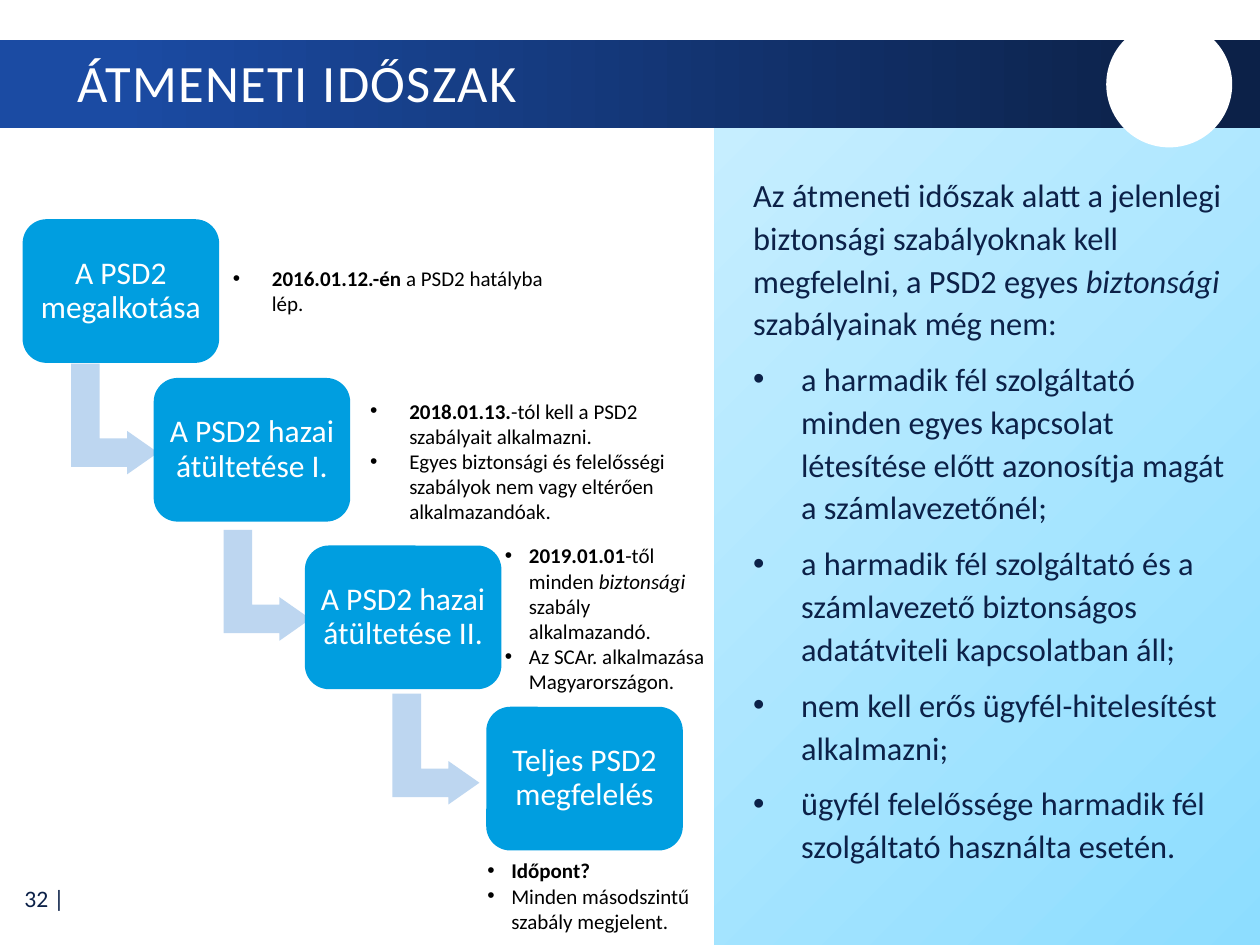
from collections import namedtuple

from lxml.etree import SubElement
from pptx import Presentation
from pptx.dml.color import RGBColor
from pptx.enum.shapes import MSO_SHAPE as SHAPE
from pptx.enum.text import MSO_ANCHOR as ANCHOR, PP_ALIGN as ALIGN
from pptx.oxml.ns import qn
from pptx.util import Inches, Pt

FONT = "Calibri"
COLORS = {
    "navy": "0C2148", "royal": "1B4BA3", "sky": "8DDDFF", "pale": "C6EEFF",
    "step": "009EE0", "arrow": "BDD6F0", "white": "FFFFFF", "black": "000000",
}
Box = namedtuple("Box", "left top width height")


def color(name):
    return RGBColor.from_string(COLORS[name])


def inches(box):
    return [Inches(value) for value in box]


def add_bullet(para, indent):
    props = para._p.get_or_add_pPr()
    props.set("marL", str(Inches(indent)))
    props.set("indent", str(-Inches(indent)))
    SubElement(props, qn("a:buFont")).set("typeface", "Arial")
    SubElement(props, qn("a:buChar")).set("char", "•")


def write(frame, paragraphs, size, ink, align=ALIGN.LEFT, anchor=ANCHOR.TOP,
          line=1.0, before=0, indent=0, plain_first=False, spacing=0, margin=None):
    """Fill a frame; a paragraph is a list of (text, style), style "b", "i" or ""."""
    frame.word_wrap = True
    frame.vertical_anchor = anchor
    if margin is not None:
        frame.margin_left = frame.margin_right = Inches(margin)
        frame.margin_top = frame.margin_bottom = Inches(margin)
    for index, spans in enumerate(paragraphs):
        para = frame.add_paragraph() if index else frame.paragraphs[0]
        if indent and (index or not plain_first):
            add_bullet(para, indent)
        para.alignment = align
        para.line_spacing = line
        para.space_before = Pt(before if index else 0)
        for text, style in spans:
            span = para.add_run()
            span.text = text
            span.font.name = FONT
            span.font.size = Pt(size)
            span.font.color.rgb = color(ink)
            span.font.bold = style == "b"
            span.font.italic = style == "i"
            if spacing:
                span.font._element.set("spc", str(round(spacing * 100)))


def add_text(page, box, paragraphs, **style):
    write(page.shapes.add_textbox(*inches(box)).text_frame, paragraphs, **style)


def add_shape(page, kind, box, fill=None, adjust=()):
    shape = page.shapes.add_shape(kind, *inches(box))
    shape.shadow.inherit = False
    shape.line.fill.background()
    if fill:
        shape.fill.solid()
        shape.fill.fore_color.rgb = color(fill)
    for index, value in enumerate(adjust):
        shape.adjustments[index] = value
    return shape


def add_gradient(page, box, stops, angle):
    fill = add_shape(page, SHAPE.RECTANGLE, box).fill
    fill.gradient()
    fill.gradient_angle = angle
    for stop, (position, name) in zip(fill.gradient_stops, stops):
        stop.position = position
        stop.color.rgb = color(name)


def draw_header(page, box, title):
    add_gradient(page, box, [(0.09, "royal"), (0.95, "navy")], 0)
    circle = Box(box.left + box.width - 1.22, box.top - 0.15, 1, 1)
    add_shape(page, SHAPE.OVAL, circle, "white")
    add_text(page, Box(box.left + 0.52, box.top + 0.02, 8.32, 0.67), [[(title, "")]],
             size=30, ink="white", anchor=ANCHOR.MIDDLE, line=0.9, spacing=0.8)


def draw_panel(page, box, paragraphs):
    add_gradient(page, box, [(0, "sky"), (1, "pale")], 135)
    inner = Box(box.left + 0.21, box.top + 0.3, box.width - 0.39, box.height - 0.64)
    add_text(page, inner, paragraphs, size=18.5, ink="navy", line=1.1, before=7.5,
             indent=0.38, plain_first=True)


def draw_step(page, box, label, arrow_offset):
    """Draw a step and, unless it is the last, the arrow to the next one."""
    if arrow_offset:
        right, down = arrow_offset
        arrow = add_shape(page, SHAPE.BENT_UP_ARROW,
                          Box(box.left + right, box.top + down, 0.88, 0.69),
                          "arrow", (0.328, 0.25, 0.358))
        arrow.rotation = 90
    step = add_shape(page, SHAPE.ROUNDED_RECTANGLE, box, "step", (0.167,))
    write(step.text_frame, [[(label, "")]], size=18, ink="white", align=ALIGN.CENTER,
          anchor=ANCHOR.MIDDLE, line=0.9, margin=0.07)


def draw_page_number(page, box, text):
    add_text(page, box, [[(text, "")]], size=13.5, ink="navy", align=ALIGN.RIGHT,
             anchor=ANCHOR.MIDDLE)


PANEL = [
    [("Az átmeneti időszak alatt a jelenlegi biztonsági szabályoknak kell megfelelni, "
      "a PSD2 egyes ", ""), ("biztonsági", "i"), (" szabályainak még nem:", "")],
    [("a harmadik fél szolgáltató minden egyes kapcsolat létesítése előtt azonosítja "
      "magát a számlavezetőnél;", "")],
    [("a harmadik fél szolgáltató és a számlavezető biztonságos adatátviteli "
      "kapcsolatban áll;", "")],
    [("nem kell erős ügyfél-hitelesítést alkalmazni;", "")],
    [("ügyfél felelőssége harmadik fél szolgáltató használta esetén.", "")],
]
# label, left and top of the step, offset of its arrow
STEPS = [
    ("A PSD2 megalkotása", 0.18, 1.74, (0.29, 1.24)),
    ("A PSD2 hazai átültetése I.", 1.22, 3, (0.46, 1.3)),
    ("A PSD2 hazai átültetése II.", 2.42, 4.33, (0.6, 1.27)),
    ("Teljes PSD2 megfelelés", 3.86, 5.61, None),
]
# box, bullet indent, paragraphs
NOTES = [
    (Box(1.75, 2.06, 2.68, 0.5), 0.31,
     [[("2016.01.12.-én", "b"), (" a PSD2 hatályba lép.", "")]]),
    (Box(2.84, 3.11, 2.76, 1.41), 0.31,
     [[("2018.01.13.", "b"), ("-tól kell a PSD2 szabályait alkalmazni.", "")],
      [("Egyes biztonsági és felelősségi szabályok nem vagy eltérően "
        "alkalmazandóak.", "")]]),
    (Box(3.91, 4.26, 1.84, 1.31), 0.19,
     [[("2019.01.01", "b"), ("-től minden ", ""), ("biztonsági", "i"),
       (" szabály alkalmazandó.", "")],
      [("Az SCAr. alkalmazása Magyarországon.", "")]]),
    (Box(3.77, 6.76, 1.84, 0.71), 0.19,
     [[("Időpont?", "b")], [("Minden másodszintű szabály megjelent.", "")]]),
]


def main():
    deck = Presentation()
    deck.slide_width, deck.slide_height = Inches(10), Inches(7.5)
    page = deck.slides.add_slide(deck.slide_layouts[6])
    draw_page_number(page, Box(0.01, 6.94, 0.6, 0.37), "32 |")
    draw_panel(page, Box(5.67, 1.01, 4.33, 6.49), PANEL)
    draw_header(page, Box(0, 0.32, 10, 0.7), "ÁTMENETI IDŐSZAK")
    for label, left, top, arrow_offset in STEPS:
        draw_step(page, Box(left, top, 1.56, 1.14), label, arrow_offset)
    for box, indent, paragraphs in NOTES:
        add_text(page, box, paragraphs, size=12, ink="black", indent=indent)
    deck.save("out.pptx")


if __name__ == "__main__":
    main()
